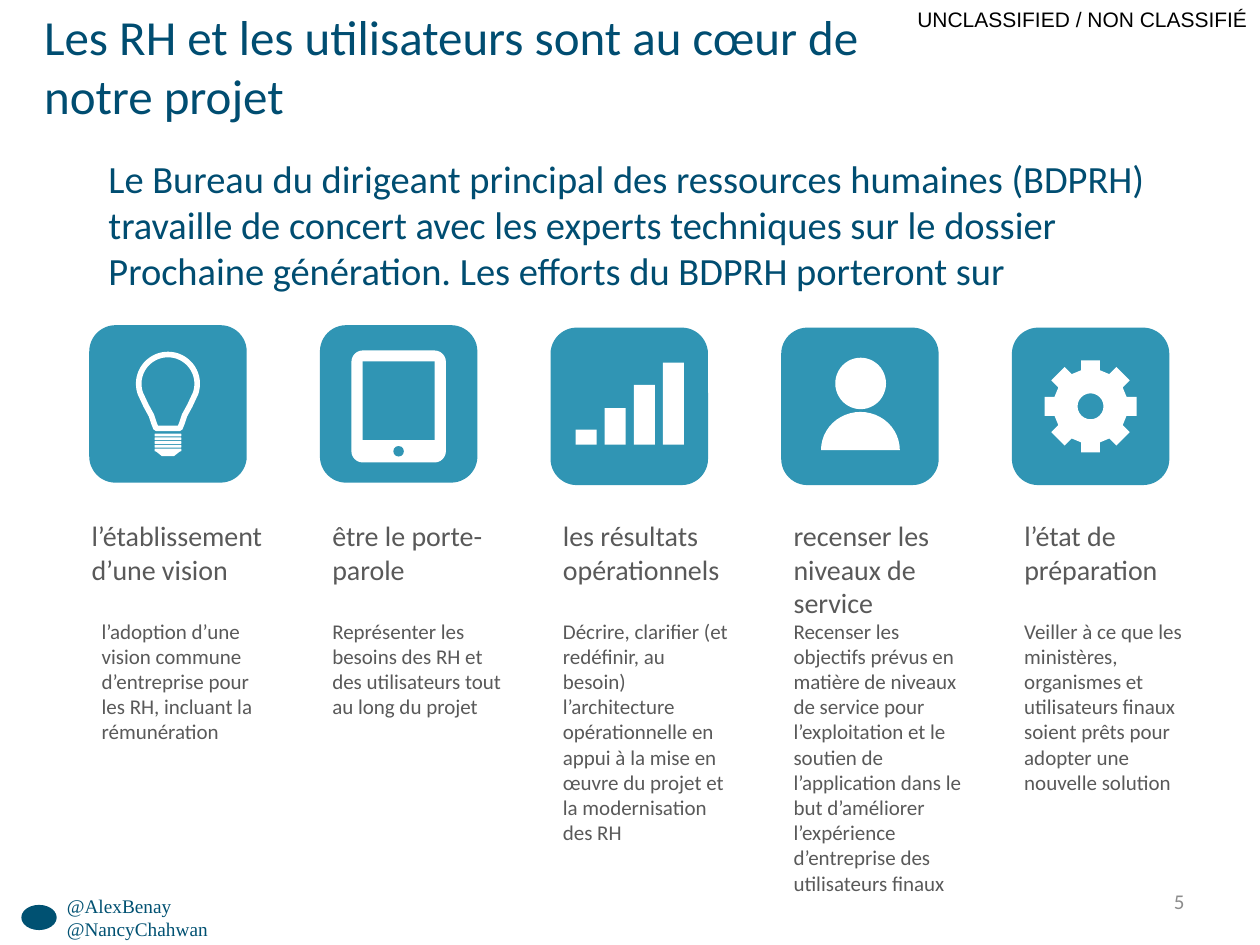
from dataclasses import dataclass
from math import cos, pi, sin

from pptx import Presentation
from pptx.dml.color import RGBColor
from pptx.enum.shapes import MSO_SHAPE
from pptx.enum.text import MSO_ANCHOR, MSO_AUTO_SIZE, PP_ALIGN
from pptx.util import Pt

ROUNDED, OVAL, RECT = MSO_SHAPE.ROUNDED_RECTANGLE, MSO_SHAPE.OVAL, MSO_SHAPE.RECTANGLE
LEFT, RIGHT = PP_ALIGN.LEFT, PP_ALIGN.RIGHT
TOP, MIDDLE = MSO_ANCHOR.TOP, MSO_ANCHOR.MIDDLE
FIXED = MSO_AUTO_SIZE.NONE
TITLE_ONLY = 5


@dataclass(frozen=True)
class Theme:
    navy: RGBColor = RGBColor(0x00, 0x4D, 0x71)
    handle: RGBColor = RGBColor(0x00, 0x51, 0x72)
    teal: RGBColor = RGBColor(0x30, 0x95, 0xB4)
    gray: RGBColor = RGBColor(0x59, 0x59, 0x59)
    pale: RGBColor = RGBColor(0x8C, 0x8C, 0x8C)
    black: RGBColor = RGBColor(0, 0, 0)
    white: RGBColor = RGBColor(255, 255, 255)
    font: str = "Calibri"
    marking_font: str = "Arial"
    handle_font: str = "Times New Roman"
    title: int = 28
    intro: int = 22
    label: int = 16
    small: int = 12
    handles: int = 11


THEME = Theme()


def write(holder, lines, size, color, font=THEME.font, align=LEFT, anchor=TOP, inset=True):
    frame = holder.text_frame
    frame.word_wrap = True
    frame.auto_size = FIXED
    frame.vertical_anchor = anchor
    if not inset:
        frame.margin_left = frame.margin_right = frame.margin_top = frame.margin_bottom = 0
    for index, line in enumerate(lines):
        paragraph = frame.add_paragraph() if index else frame.paragraphs[0]
        paragraph.alignment = align
        run = paragraph.add_run()
        run.text = line
        run.font.size = Pt(size)
        run.font.name = font
        run.font.color.rgb = color


def add_text(slide, box, lines, size, color, **style):
    write(slide.shapes.add_textbox(*map(Pt, box)), lines, size, color, **style)


def paint(shape, color):
    shape.shadow.inherit = False
    shape.fill.solid()
    shape.fill.fore_color.rgb = color
    shape.line.fill.background()
    return shape


def add_solid(shapes, kind, box, color):
    return paint(shapes.add_shape(kind, *map(Pt, box)), color)


def add_outline(shapes, x, y, contours, color):
    placed = [[(Pt(x + dx), Pt(y + dy)) for dx, dy in contour] for contour in contours]
    builder = shapes.build_freeform(*placed[0][0], scale=1.0)
    for index, corners in enumerate(placed):
        if index:
            builder.move_to(*corners[0])
        builder.add_line_segments(corners[1:], close=True)
    return paint(builder.convert_to_shape(), color)


def arc(cx, cy, rx, ry, start, stop, steps=24):
    angles = [start + (stop - start) * i / steps for i in range(steps + 1)]
    return [(cx + rx * cos(a), cy + ry * sin(a)) for a in angles]


def draw_bulb(shapes, x, y):
    center = 45
    right = arc(center, 33.5, 16.7, 16.7, -pi / 2, pi / 9)
    right += [(center + dx, dy) for dx, dy in [(12.5, 46), (9.5, 51.5), (8, 56), (6.8, 59)]]
    left = [(2 * center - px, py) for px, py in reversed(right)]
    glass = add_outline(shapes, x, y, [right + left], THEME.teal)
    glass.line.color.rgb = THEME.white
    glass.line.width = Pt(3.2)
    for thread in range(5):
        add_solid(shapes, ROUNDED, (x + center - 7.6, y + 62 + 2.15 * thread, 15.2, 1.5), THEME.white)
    base = [(-7, 72), (7, 72), (3.5, 74.8), (-3.5, 74.8)]
    add_outline(shapes, x + center, y, [base], THEME.white)


def draw_tablet(shapes, x, y):
    case = add_solid(shapes, ROUNDED, (x + 18, y + 14.5, 54, 64), THEME.white)
    case.adjustments[0] = 0.12
    add_solid(shapes, RECT, (x + 24.4, y + 20.8, 41.2, 44.8), THEME.teal)
    add_solid(shapes, OVAL, (x + 42, y + 69.1, 6, 6), THEME.teal)


def draw_bars(shapes, x, y):
    base, width = 66.8, 12
    bars = []
    for index, height in enumerate((8.5, 20.8, 34, 46.8)):
        left = 14.4 + 16.6 * index
        bars.append([(left, base), (left, base - height),
                     (left + width, base - height), (left + width, base)])
    add_outline(shapes, x, y, bars, THEME.white)


def draw_person(shapes, x, y):
    add_solid(shapes, OVAL, (x + 30.9, y + 17.2, 29, 29.4), THEME.white)
    add_outline(shapes, x, y, [arc(45.3, 70, 22.5, 21.8, pi, 2 * pi)], THEME.white)


def draw_gear(shapes, x, y):
    center, root, tip, half = 45, 20.6, 26.3, 5.4
    teeth = []
    for tooth in range(8):
        angle = tooth * pi / 4
        for radius, side in ((root, -half), (tip, -half), (tip, half), (root, half)):
            teeth.append((center + radius * cos(angle) - side * sin(angle),
                          center + radius * sin(angle) + side * cos(angle)))
    hole = arc(center, center, 7.4, 7.4, 2 * pi, 0)
    add_outline(shapes, x, y, [teeth, hole], THEME.white)


COLUMNS = [
    (draw_bulb, 185.8, -5.8, "l’établissement d’une vision",
     "l’adoption d’une vision commune d’entreprise pour les RH, incluant la rémunération"),
    (draw_tablet, 185.8, 0, "être le porte-parole",
     "Représenter les besoins des RH et des utilisateurs tout au long du projet"),
    (draw_bars, 187.2, 0, "les résultats opérationnels",
     "Décrire, clarifier (et redéfinir, au besoin) l’architecture opérationnelle en appui "
     "à la mise en œuvre du projet et la modernisation des RH"),
    (draw_person, 187.2, 0, "recenser les niveaux de service",
     "Recenser les objectifs prévus en matière de niveaux de service pour l’exploitation "
     "et le soutien de l’application dans le but d’améliorer l’expérience d’entreprise "
     "des utilisateurs finaux"),
    (draw_gear, 187.2, 0, "l’état de préparation",
     "Veiller à ce que les ministères, organismes et utilisateurs finaux soient prêts pour "
     "adopter une nouvelle solution"),
]


def add_heading(slide, box):
    x, y, width, height = box
    title = slide.shapes.title
    title.left, title.top, title.width, title.height = map(Pt, (x + 25.2, y + 3.6, 519, 69))
    write(title, ["Les RH et les utilisateurs sont au cœur de notre projet"],
          THEME.title, THEME.navy, inset=False)
    add_text(slide, (x, y, width, 21.6), ["UNCLASSIFIED / NON CLASSIFIÉ"],
             THEME.small, THEME.black, font=THEME.marking_font, align=RIGHT)
    intro = ("Le Bureau du dirigeant principal des ressources humaines (BDPRH) travaille de concert "
             "avec les experts techniques sur le dossier Prochaine génération. "
             "Les efforts du BDPRH porteront sur")
    add_text(slide, (x + 62, y + 88.6, 596, height), [intro],
             THEME.intro, THEME.navy, inset=False)


def add_column(slide, box, column):
    x, y, width, height = box
    draw_icon, tile_top, label_shift, label, detail = column
    icon = slide.shapes.add_group_shape().shapes
    add_solid(icon, ROUNDED, (x, tile_top, 90, 90), THEME.teal)
    draw_icon(icon, x, tile_top)
    add_text(slide, (x + label_shift, y + 107, 118, 46), [label], THEME.label, THEME.gray)
    add_text(slide, (x, y + 163.9, width, height - 163.9), [detail], THEME.small, THEME.gray)


def add_footer(slide, box):
    x, y, width, height = box
    add_solid(slide.shapes, OVAL, (x + 12.2, y + 16.5, 20.2, 14.4), THEME.handle)
    add_text(slide, (x + 31.1, y + 6.7, 175, 34), ["@AlexBenay", "@NancyChahwan"],
             THEME.handles, THEME.handle, font=THEME.handle_font)
    add_text(slide, (x + width - 204, y, 168, 29), ["5"],
             THEME.small, THEME.pale, align=RIGHT, anchor=MIDDLE)


def main():
    deck = Presentation()
    deck.slide_width, deck.slide_height = Pt(720), Pt(540)
    slide = deck.slides.add_slide(deck.slide_layouts[TITLE_ONLY])
    add_heading(slide, (0, 0, 720, 46))
    for index, column in enumerate(COLUMNS):
        add_column(slide, (51 + 131.8 * index, 185.8, 111, 300), column)
    add_footer(slide, (0, 500.6, 720, 39.4))
    deck.save("out.pptx")


if __name__ == "__main__":
    main()
